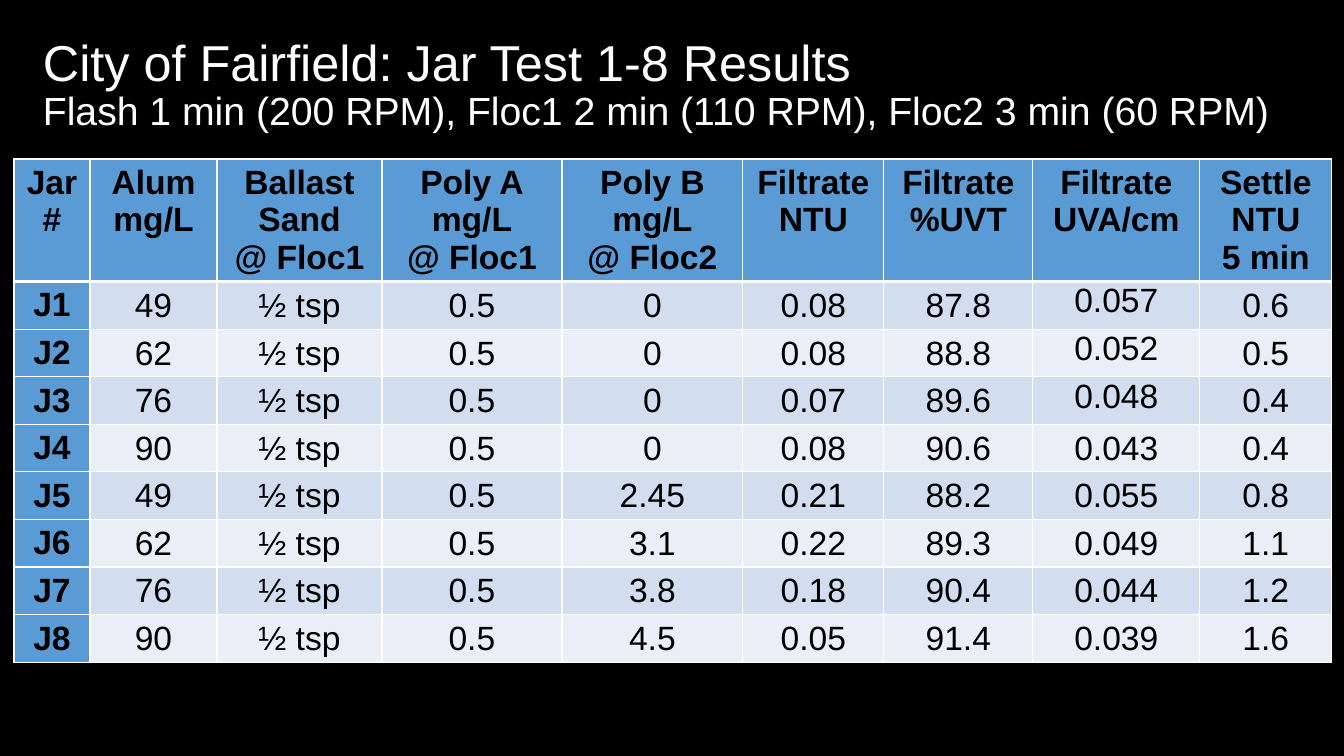
from pptx import Presentation
from pptx.dml.color import RGBColor
from pptx.enum.text import MSO_ANCHOR as ANCHOR, PP_ALIGN as ALIGN
from pptx.oxml.xmlchemy import OxmlElement
from pptx.util import Emu, Pt

BLACK = RGBColor(0x00, 0x00, 0x00)
WHITE = RGBColor(0xFF, 0xFF, 0xFF)
BLUE = RGBColor(0x5B, 0x9B, 0xD5)
BANDS = (RGBColor(0xD2, 0xDE, 0xEF), RGBColor(0xEA, 0xEF, 0xF7))

COL_WIDTHS = (76, 127, 165, 180, 181, 141, 149, 167, 132)
HEADER_HEIGHT, ROW_HEIGHT = 122, 47
UVA_COL = 7
TOP_ALIGNED_UVA_ROWS = (1, 2, 3)

HEADERS = (
    ("Jar #",),
    ("Alum", "mg/L"),
    ("Ballast", "Sand", "@ Floc1"),
    ("Poly A", "mg/L", "@ Floc1"),
    ("Poly B", "mg/L", "@ Floc2"),
    ("Filtrate", "NTU"),
    ("Filtrate", "%UVT"),
    ("Filtrate", "UVA/cm"),
    ("Settle", "NTU", "5 min"),
)
# Alum, second polymer, filtrate NTU, %UVT, UVA/cm, settled NTU
RESULTS = (
    ("49", "0", "0.08", "87.8", "0.057", "0.6"),
    ("62", "0", "0.08", "88.8", "0.052", "0.5"),
    ("76", "0", "0.07", "89.6", "0.048", "0.4"),
    ("90", "0", "0.08", "90.6", "0.043", "0.4"),
    ("49", "2.45", "0.21", "88.2", "0.055", "0.8"),
    ("62", "3.1", "0.22", "89.3", "0.049", "1.1"),
    ("76", "3.8", "0.18", "90.4", "0.044", "1.2"),
    ("90", "4.5", "0.05", "91.4", "0.039", "1.6"),
)


def px(n):
    return Emu(round(n * 914400 / 100.8))


class SlideBuilder:
    font = "Arial"
    cell_size = 24

    def __init__(self, prs):
        self.s = prs.slides.add_slide(prs.slide_layouts[6])

    def background(self, color):
        fill = self.s.background.fill
        fill.solid()
        fill.fore_color.rgb = color

    def run(self, p, text, size, color, bold=False):
        r = p.add_run()
        r.text = text
        r.font.name = self.font
        r.font.size = Pt(size)
        r.font.bold = bold
        r.font.color.rgb = color

    def title(self, x, y, w, h, lines):
        tf = self.s.shapes.add_textbox(px(x), px(y), px(w), px(h)).text_frame
        tf.word_wrap = True
        tf.vertical_anchor = ANCHOR.MIDDLE
        p = tf.paragraphs[0]
        p.line_spacing = 0.9
        for i, (text, size) in enumerate(lines):
            if i:
                p.add_line_break()
            self.run(p, text, size, WHITE)

    def borders(self, cell, top, bottom):
        tc_pr = cell._tc.get_or_add_tcPr()
        for side, width in (("L", 1), ("R", 1), ("T", top), ("B", bottom)):
            ln = OxmlElement(f"a:ln{side}")
            ln.set("w", str(Pt(width)))
            fill = OxmlElement("a:solidFill")
            clr = OxmlElement("a:srgbClr")
            clr.set("val", str(WHITE))
            fill.append(clr)
            ln.append(fill)
            tc_pr.append(ln)

    def cell(self, cell, lines, row, col):
        is_label = row == 0 or col == 0
        self.borders(cell, 3 if row == 1 else 1, 3 if row == 0 else 1)
        cell.fill.solid()
        cell.fill.fore_color.rgb = BLUE if is_label else BANDS[(row - 1) % 2]
        if not is_label:
            cell.margin_left = cell.margin_right = cell.margin_top = px(1)
            cell.margin_bottom = 0
            if col != UVA_COL or row not in TOP_ALIGNED_UVA_ROWS:
                cell.vertical_anchor = ANCHOR.MIDDLE
        tf = cell.text_frame
        for i, line in enumerate(lines):
            p = tf.add_paragraph() if i else tf.paragraphs[0]
            p.alignment = ALIGN.CENTER
            self.run(p, line, self.cell_size, BLACK, is_label)

    def table(self, x, y, widths, heights, rows):
        table = self.s.shapes.add_table(
            len(rows), len(widths), px(x), px(y), px(sum(widths)), px(sum(heights))
        ).table
        for column, width in zip(table.columns, widths):
            column.width = px(width)
        for i, (row, height) in enumerate(zip(rows, heights)):
            table.rows[i].height = px(height)
            for j, lines in enumerate(row):
                self.cell(table.cell(i, j), lines, i, j)


def main():
    prs = Presentation()
    prs.slide_width, prs.slide_height = px(1344), px(756)
    slide = SlideBuilder(prs)
    slide.background(BLACK)

    # Jar test results
    rows = [HEADERS]
    for n, (alum, polymer, *readings) in enumerate(RESULTS, 1):
        values = (f"J{n}", alum, "½ tsp", "0.5", polymer, *readings)
        rows.append([(value,) for value in values])
    heights = [HEADER_HEIGHT] + [ROW_HEIGHT] * len(RESULTS)
    slide.table(14, 159, COL_WIDTHS, heights, rows)

    # Title and mixing conditions
    slide.title(33, 13, 1257, 146, (
        ("City of Fairfield: Jar Test 1-8 Results", 36),
        ("Flash 1 min (200 RPM), Floc1 2 min (110 RPM), Floc2 3 min (60 RPM)", 28),
    ))
    prs.save("out.pptx")


if __name__ == "__main__":
    main()
